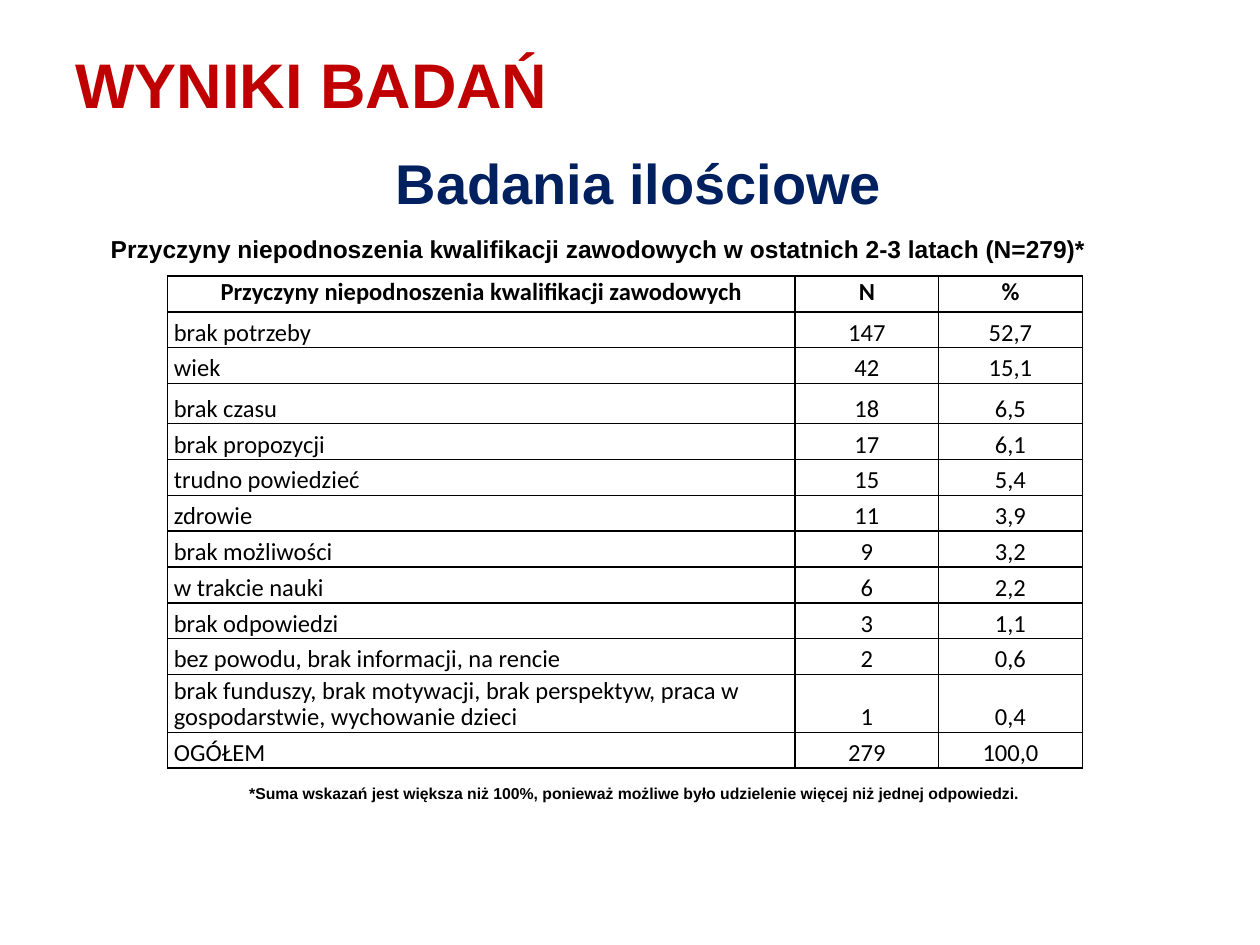
"""Build the slide with reasons for not raising professional qualifications."""
from lxml import etree
from pptx import Presentation
from pptx import util as u
from pptx.dml import color
from pptx.enum import text
from pptx.oxml import ns

THEME = {
    "red": color.RGBColor.from_string("C00000"),
    "navy": color.RGBColor.from_string("002060"),
    "black": color.RGBColor.from_string("000000"),
    "head": "Arial", "body": "Calibri",
    "title": 36, "subtitle": 32, "text": 14, "note": 9,
    "leading": 15, "border": 1,
}
LEFT, CENTER, JUSTIFY = (text.PP_ALIGN.LEFT, text.PP_ALIGN.CENTER,
                         text.PP_ALIGN.JUSTIFY)
MIDDLE, BOTTOM = text.MSO_ANCHOR.MIDDLE, text.MSO_ANCHOR.BOTTOM
FIT, FIXED = text.MSO_AUTO_SIZE.SHAPE_TO_FIT_TEXT, text.MSO_AUTO_SIZE.NONE


def write(p, words, size, font, fill, bold, align):
    p.alignment = align
    r = p.add_run()
    r.text = words
    values = {"size": u.Pt(THEME[size]), "name": THEME[font], "bold": bold}
    for name, value in values.items():
        setattr(r.font, name, value)
    r.font.color.rgb = THEME[fill]


def add_borders(cell):
    tc_pr = cell._tc.get_or_add_tcPr()
    for i, side in enumerate(("lnL", "lnR", "lnT", "lnB")):
        ln = etree.Element(ns.qn(f"a:{side}"), w=str(u.Pt(THEME["border"])))
        fill = etree.SubElement(ln, ns.qn("a:solidFill"))
        etree.SubElement(fill, ns.qn("a:srgbClr"), val=str(THEME["black"]))
        tc_pr.insert(i, ln)


prs = Presentation()
prs.slide_width, prs.slide_height = u.Inches(10), u.Inches(7.5)
s = prs.slides.add_slide(prs.slide_layouts[6])

rows = [
    ("Przyczyny niepodnoszenia kwalifikacji zawodowych", "N", "%"),
    ("brak potrzeby", "147", "52,7"),
    ("wiek", "42", "15,1"),
    ("brak czasu", "18", "6,5"),
    ("brak propozycji", "17", "6,1"),
    ("trudno powiedzieć", "15", "5,4"),
    ("zdrowie", "11", "3,9"),
    ("brak możliwości", "9", "3,2"),
    ("w trakcie nauki", "6", "2,2"),
    ("brak odpowiedzi", "3", "1,1"),
    ("bez powodu, brak informacji, na rencie", "2", "0,6"),
    ("brak funduszy, brak motywacji, brak perspektyw, praca w "
     "gospodarstwie, wychowanie dzieci", "1", "0,4"),
    ("OGÓŁEM", "279", "100,0"),
]
widths = (4.98, 1.14, 1.14)
height = 3.91
tall_rows = {3: 0.32, 11: 0.46}
row_height = (height - sum(tall_rows.values())) / (len(rows) - len(tall_rows))

table = s.shapes.add_table(len(rows), len(widths), u.Inches(1.33), u.Inches(2.19),
                           u.Inches(sum(widths)), u.Inches(height)).table
table.first_row = table.horz_banding = False
for column, width in zip(table.columns, widths):
    column.width = u.Inches(width)
for i, row in enumerate(rows):
    table.rows[i].height = u.Inches(tall_rows.get(i, row_height))
    for j, words in enumerate(row):
        cell = table.cell(i, j)
        cell_format = {
            "margin_left": u.Inches(0.05), "margin_right": u.Inches(0.05),
            "margin_top": 0, "margin_bottom": 0,
            "vertical_anchor": BOTTOM if i else MIDDLE,
        }
        for name, value in cell_format.items():
            setattr(cell, name, value)
        cell.fill.background()
        add_borders(cell)
        p = cell.text_frame.paragraphs[0]
        p.line_spacing = u.Pt(THEME["leading"])
        write(p, words, "text", "body", "black", i == 0,
              LEFT if i and j == 0 else CENTER)

boxes = [
    ("Przyczyny niepodnoszenia kwalifikacji zawodowych w ostatnich 2-3 latach (N=279)*",
     (0.78, 1.8, 8.59, 0.34), "text", "black", LEFT, FIT),
    ("WYNIKI BADAŃ", (0.5, 0.3, 9, 0.72), "title", "red", LEFT, FIXED),
    ("Badania ilościowe", (0.86, 1.17, 8.42, 0.55), "subtitle", "navy", CENTER, FIXED),
    ("*Suma wskazań jest większa niż 100%, ponieważ możliwe było udzielenie "
     "więcej niż jednej odpowiedzi.",
     (1.88, 6.17, 6.56, 0.25), "note", "black", JUSTIFY, FIT),
]
for words, place, size, fill, align, fit in boxes:
    tf = s.shapes.add_textbox(*map(u.Inches, place)).text_frame
    frame_format = {"word_wrap": True, "auto_size": fit, "vertical_anchor": MIDDLE}
    for name, value in frame_format.items():
        setattr(tf, name, value)
    write(tf.paragraphs[0], words, size, "head", fill, True, align)

prs.save("out.pptx")
